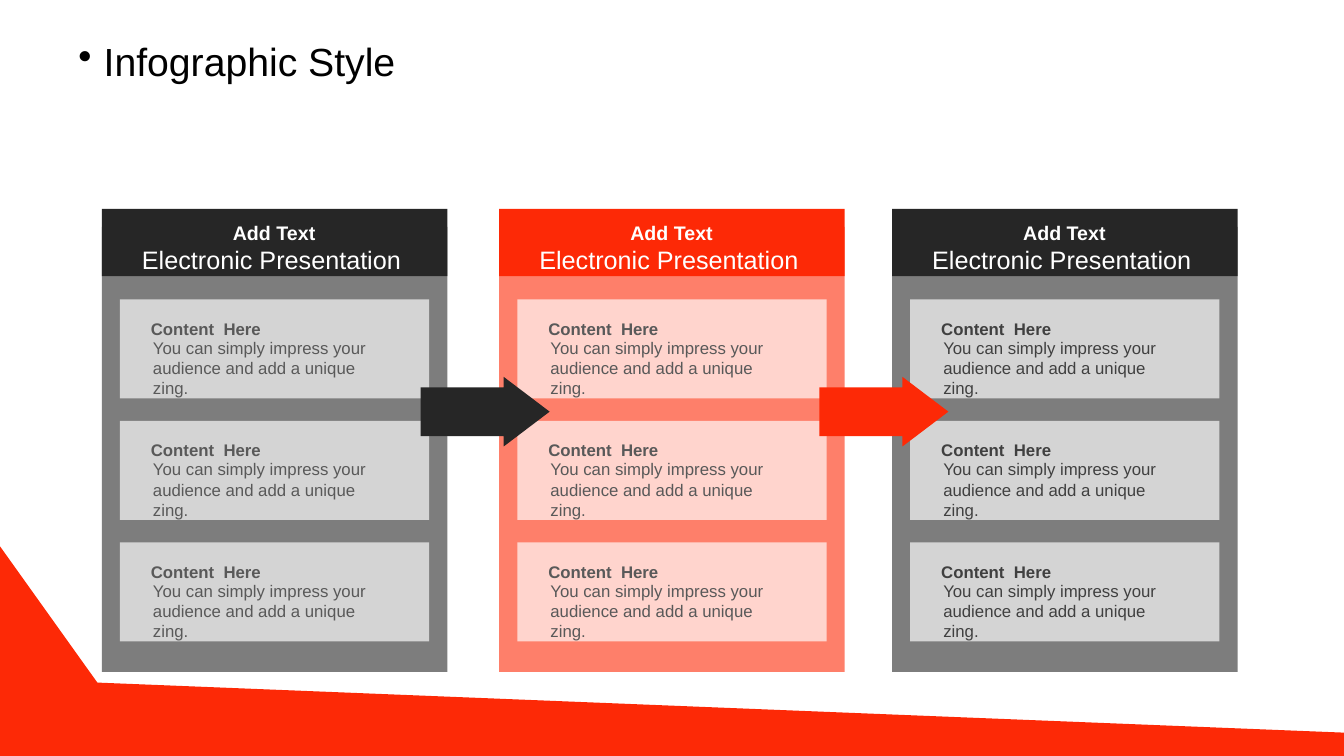
from dataclasses import dataclass

from lxml import etree
from pptx import Presentation
from pptx import util as u
from pptx.dml.color import RGBColor
from pptx.enum import shapes, text
from pptx.oxml import ns

Pt = u.Pt


@dataclass(frozen=True)
class Theme:
    font: str = "Arial"
    title_size: float = 28
    label_size: float = 14
    heading_size: float = 18
    card_size: float = 12
    black: str = "000000"
    white: str = "FFFFFF"
    red: str = "FD2906"
    salmon: str = "FE7F6A"
    blush: str = "FFD4CD"
    charcoal: str = "262626"
    gray: str = "7D7D7D"
    silver: str = "D4D4D4"
    text_gray: str = "595959"
    text_dark: str = "404040"


@dataclass(frozen=True)
class Box:
    left: float
    top: float
    width: float
    height: float

    def lengths(self) -> tuple:
        return Pt(self.left), Pt(self.top), Pt(self.width), Pt(self.height)


@dataclass(frozen=True)
class Column:
    left: float
    header: str
    panel: str
    card: str
    ink: str


@dataclass(frozen=True)
class Arrow:
    left: float
    color: str


THEME = Theme()
COLUMNS = (
    Column(72.7, THEME.charcoal, THEME.gray, THEME.silver, THEME.text_gray),
    Column(356.6, THEME.red, THEME.salmon, THEME.blush, THEME.text_gray),
    Column(637.2, THEME.charcoal, THEME.gray, THEME.silver, THEME.text_dark),
)
ARROWS = (Arrow(300.4, THEME.charcoal), Arrow(585.2, THEME.red))
CARD_TOPS = [213.8 + 86.8 * row for row in range(3)]
COLUMN_WIDTH = 246.8


def paint(shape, color: str) -> None:
    shape.shadow.inherit = False
    shape.fill.solid()
    shape.fill.fore_color.rgb = RGBColor.from_string(color)
    shape.line.fill.background()


def add_block(slide, box: Box, color: str, kind=shapes.MSO_SHAPE.RECTANGLE):
    block = slide.shapes.add_shape(kind, *box.lengths())
    paint(block, color)
    return block


def add_text(slide, box: Box, wording: str, size: float, color: str,
             bold: bool = False, align=text.PP_ALIGN.LEFT):
    """Add a one-paragraph text box and return its paragraph."""
    frame = slide.shapes.add_textbox(*box.lengths()).text_frame
    frame.word_wrap = True
    paragraph = frame.paragraphs[0]
    paragraph.text = wording
    paragraph.alignment = align
    font = paragraph.font
    font.name, font.size, font.bold = THEME.font, Pt(size), bold
    font.color.rgb = RGBColor.from_string(color)
    return paragraph


def add_bullet(paragraph, indent: float) -> None:
    properties = paragraph._p.get_or_add_pPr()
    properties.set("marL", str(Pt(indent)))
    properties.set("indent", str(-Pt(indent)))
    bullet = etree.Element(ns.qn("a:buChar"), char="•")
    properties.find(ns.qn("a:defRPr")).addprevious(bullet)


def add_footer_wedge(slide) -> None:
    outline = slide.shapes.build_freeform(Pt(-2), Pt(387.4))
    corners = ((69.6, 487.6), (961.2, 523.4), (960.5, 542), (-1.4, 541.4))
    outline.add_line_segments([(Pt(x), Pt(y)) for x, y in corners])
    paint(outline.convert_to_shape(), THEME.red)


def add_title(slide) -> None:
    title = add_text(slide, Box(49, 26.6, 911, 57), "Infographic Style",
                     THEME.title_size, THEME.black)
    title.line_spacing = 0.9
    add_bullet(title, 18)


def add_column_blocks(slide, column: Column) -> None:
    add_block(slide, Box(column.left, 162, COLUMN_WIDTH, 318), column.panel)
    add_block(slide, Box(column.left, 149.2, COLUMN_WIDTH, 48), column.header)
    for top in CARD_TOPS:
        add_block(slide, Box(column.left + 12.9, top, 221, 70.8), column.card)


def add_arrow(slide, arrow: Arrow) -> None:
    shape = add_block(slide, Box(arrow.left, 269.2, 92.2, 49.7), arrow.color,
                      shapes.MSO_SHAPE.RIGHT_ARROW)
    shape.adjustments[0] = 0.7
    shape.adjustments[1] = 0.66


def add_column_texts(slide, column: Column) -> None:
    center = text.PP_ALIGN.CENTER
    add_text(slide, Box(column.left + 14.4, 154, 217.4, 24.5), "Add Text",
             THEME.label_size, THEME.white, True, center)
    add_text(slide, Box(column.left + 12.5, 170.8, 217.4, 21.6),
             "Electronic Presentation", THEME.heading_size, THEME.white,
             align=center)
    for top in CARD_TOPS:
        add_text(slide, Box(column.left + 29.5, top + 23.8, 187.2, 36),
                 "You can simply impress your audience and add a unique zing.",
                 THEME.card_size, column.ink)
        add_text(slide, Box(column.left + 28, top + 10.1, 190, 21.6),
                 "Content  Here", THEME.card_size, column.ink, True)


def main() -> None:
    presentation = Presentation()
    presentation.slide_width, presentation.slide_height = Pt(960), Pt(540)
    slide = presentation.slides.add_slide(presentation.slide_layouts[6])
    add_footer_wedge(slide)
    add_title(slide)
    for column in COLUMNS:
        add_column_blocks(slide, column)
    for arrow in ARROWS:
        add_arrow(slide, arrow)
    for column in COLUMNS:
        add_column_texts(slide, column)
    presentation.save("out.pptx")


if __name__ == "__main__":
    main()
